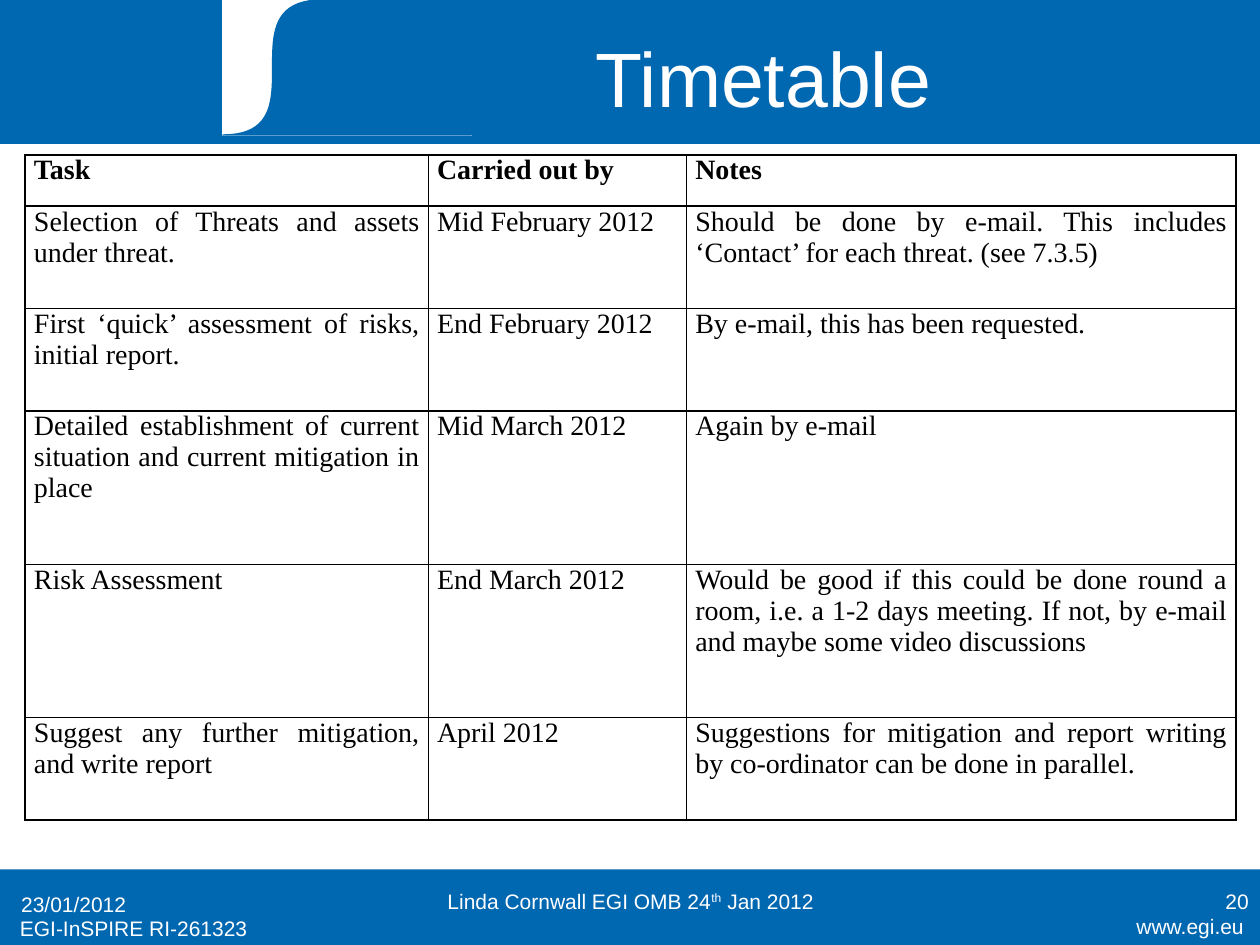
from lxml import etree
from pptx import Presentation
from pptx.dml.color import RGBColor
from pptx.enum.shapes import MSO_SHAPE
from pptx.enum.text import MSO_ANCHOR, PP_ALIGN
from pptx.oxml.ns import qn
from pptx.util import Inches, Pt

RECT = MSO_SHAPE.RECTANGLE
TOP, MIDDLE = MSO_ANCHOR.TOP, MSO_ANCHOR.MIDDLE
LEFT, CENTER, RIGHT, JUSTIFY = PP_ALIGN.LEFT, PP_ALIGN.CENTER, PP_ALIGN.RIGHT, PP_ALIGN.JUSTIFY
BLUE = RGBColor(0x00, 0x67, 0xB1)
WHITE = RGBColor(0xFF, 0xFF, 0xFF)
BLACK = RGBColor(0x00, 0x00, 0x00)

WIDTH, HEIGHT = 10, 7.5
TITLE_FONT = {"name": "Arial", "size": Pt(44), "bold": False}
FOOTER_FONT = {"name": "Arial", "size": Pt(12)}
TABLE_FONT = {"name": "Times New Roman", "size": Pt(16)}
COLUMN_UNITS = (320, 205, 436)
ROW_UNITS = (1, 2, 2, 3, 3, 2)
TIMETABLE = [
    ("Task", "Carried out by", "Notes"),
    ("Selection of Threats and assets under threat.", "Mid February 2012",
     "Should be done by e-mail. This includes ‘Contact’ for each threat. (see 7.3.5)"),
    ("First ‘quick’ assessment of risks, initial report.", "End February 2012",
     "By e-mail, this has been requested."),
    ("Detailed establishment of current situation and current mitigation in place",
     "Mid March 2012", "Again by e-mail"),
    ("Risk Assessment", "End March 2012",
     "Would be good if this could be done round a room, i.e. a 1-2 days meeting. "
     "If not, by e-mail and maybe some video discussions"),
    ("Suggest any further mitigation, and write report", "April 2012",
     "Suggestions for mitigation and report writing by co-ordinator can be done in parallel."),
]
FOOTER_TEXTS = [
    ((0.839, 0.5, 0.158, 0.52), ["www.egi.eu"], RIGHT, TOP),
    ((0.006, 0.53, 0.25, 0.52), ["EGI-InSPIRE RI-261323"], LEFT, TOP),
    ((0.007, 0.12, 0.233, 0.67), ["23/01/2012"], LEFT, MIDDLE),
    ((0.342, 0.08, 0.317, 0.67), ["Linda Cornwall EGI OMB 24", "th", " Jan 2012"], CENTER, MIDDLE),
    ((0.768, 0.08, 0.233, 0.67), ["20"], RIGHT, MIDDLE),
]


def share(box, part):
    x, y, w, h = box
    return x + part[0] * w, y + part[1] * h, part[2] * w, part[3] * h


def emu(box):
    return [Inches(v) for v in box]


def set_font(font, values, color):
    for name, value in values.items():
        setattr(font, name, value)
    font.color.rgb = color


def paint(sp, color):
    sp.shadow.inherit = False
    sp.fill.solid()
    sp.fill.fore_color.rgb = color
    sp.line.color.rgb = color
    sp.line.width = Pt(0.75)


def add_band(s, box, color):
    sp = s.shapes.add_shape(RECT, *emu(box))
    paint(sp, color)
    return sp


def add_header(s, box):
    add_band(s, box, BLUE)
    notch = share(box, (0.177, 0, 0.197, 0.94))
    add_band(s, notch, WHITE)
    x, y, w, h = notch
    bend, steps = 0.4 * w, 40
    curve = []
    for i in range(1, steps + 1):
        t = i / steps
        across = 3 * t * (1 - t) ** 2 + t ** 3
        down = (1 - t) ** 3 + 3 * t * (1 - t) ** 2
        curve.append((Inches(x + bend * across), Inches(y + h * down)))
    builder = s.shapes.build_freeform(Inches(x + w), Inches(y))
    builder.add_line_segments([(Inches(x + w), Inches(y + h)), (Inches(x), Inches(y + h))] + curve)
    paint(builder.convert_to_shape(), BLUE)

    title = s.shapes.title
    title.element.getparent().append(title.element)
    title.left, title.top, title.width, title.height = emu(share(box, (0.232, 0.114, 0.748, 0.833)))
    tf = title.text_frame
    tf.text = "Timetable"
    tf.vertical_anchor = MIDDLE
    p = tf.paragraphs[0]
    p.alignment = CENTER
    set_font(p.runs[0].font, TITLE_FONT, WHITE)


def add_footer(s, box):
    add_band(s, box, BLUE).line.fill.background()
    for part, texts, align, anchor in FOOTER_TEXTS:
        tf = s.shapes.add_textbox(*emu(share(box, part))).text_frame
        tf.word_wrap = True
        tf.vertical_anchor = anchor
        p = tf.paragraphs[0]
        p.alignment = align
        for text in texts:
            r = p.add_run()
            r.text = text
            set_font(r.font, FOOTER_FONT, WHITE)
            if text == "th":
                r.font._element.set("baseline", "30000")


def add_borders(cell):
    tc_pr = cell._tc.get_or_add_tcPr()
    for i, side in enumerate(("a:lnL", "a:lnR", "a:lnT", "a:lnB")):
        ln = etree.Element(qn(side), w=str(Pt(1)))
        fill = etree.SubElement(ln, qn("a:solidFill"))
        etree.SubElement(fill, qn("a:srgbClr"), val=str(BLACK))
        tc_pr.insert(i, ln)


def add_timetable(s, box):
    table = s.shapes.add_table(len(ROW_UNITS), len(COLUMN_UNITS), *emu(box)).table
    table.first_row = table.horz_banding = False
    for column, units in zip(table.columns, COLUMN_UNITS):
        column.width = Inches(box[2] * units / sum(COLUMN_UNITS))
    for row, units in zip(table.rows, ROW_UNITS):
        row.height = Inches(box[3] * units / sum(ROW_UNITS))
    for i, texts in enumerate(TIMETABLE):
        for j, text in enumerate(texts):
            cell = table.cell(i, j)
            cell.fill.background()
            cell.margin_left = cell.margin_right = Inches(0.07)
            cell.margin_top = cell.margin_bottom = 0
            cell.text = text
            p = cell.text_frame.paragraphs[0]
            p.alignment = JUSTIFY
            p.space_after = Pt(2)
            set_font(p.runs[0].font, {**TABLE_FONT, "bold": i == 0}, BLACK)
            add_borders(cell)


def main():
    prs = Presentation()
    prs.slide_width, prs.slide_height = Inches(WIDTH), Inches(HEIGHT)
    s = prs.slides.add_slide(prs.slide_layouts[5])
    page = (0, 0, WIDTH, HEIGHT)
    add_header(s, share(page, (0, 0, 1, 0.152)))
    add_footer(s, share(page, (0, 0.92, 1, 0.08)))
    add_timetable(s, share(page, (0.02, 0.164, 0.961, 0.704)))
    prs.save("out.pptx")


if __name__ == "__main__":
    main()
